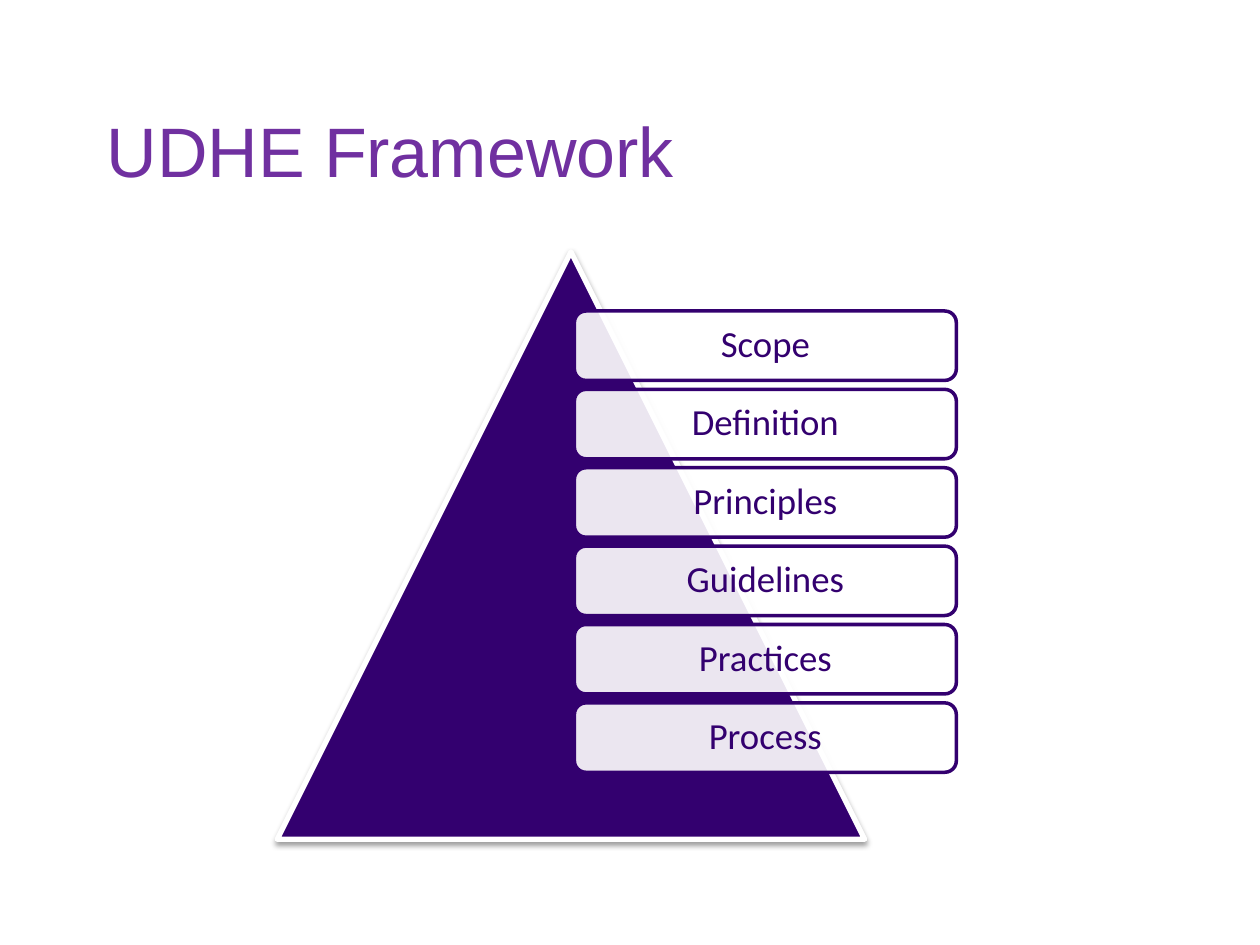
from dataclasses import dataclass

from lxml import etree
from pptx import Presentation
from pptx import util as u
from pptx.dml.color import RGBColor
from pptx.enum import shapes, text
from pptx.oxml.ns import qn

PURPLE, VIOLET, WHITE = "33006F", "7030A0", "FFFFFF"
LAYERS = ("Scope", "Definition", "Principles", "Guidelines", "Practices", "Process")
FIRST_LAYER_TOP, LAYER_PITCH = 6.27, 1.58


@dataclass
class Box:
    """Position and size in centimetres."""
    left: float
    top: float
    width: float
    height: float

    def lengths(self) -> list:
        return [u.Cm(v) for v in (self.left, self.top, self.width, self.height)]


def colour(hex_value: str) -> RGBColor:
    return RGBColor.from_string(hex_value)


def set_all(target, values: dict) -> None:
    for name, value in values.items():
        setattr(target, name, value)


def write(shape, words: str, frame_format: dict, paragraph_format: dict,
          font_format: dict, font_colour: str) -> None:
    set_all(shape.text_frame, {"word_wrap": True, **frame_format})
    paragraph = shape.text_frame.paragraphs[0]
    set_all(paragraph, {"line_spacing": 0.9, **paragraph_format})
    run = paragraph.add_run()
    run.text = words
    set_all(run.font, font_format)
    run.font.color.rgb = colour(font_colour)


def add_outlined(slide, kind, box: Box, fill: str, line: str, line_width: float):
    shape = slide.shapes.add_shape(kind, *box.lengths())
    shape.shadow.inherit = False
    shape.fill.solid()
    shape.fill.fore_color.rgb = colour(fill)
    shape.line.color.rgb = colour(line)
    shape.line.width = u.Pt(line_width)
    return shape


def set_alpha(colour_element, percent: int) -> None:
    etree.SubElement(colour_element, qn("a:alpha"), val=str(percent * 1000))


def add_pyramid(slide) -> None:
    """Draw the triangle with its soft shadow straight below."""
    pyramid = add_outlined(slide, shapes.MSO_SHAPE.ISOSCELES_TRIANGLE,
                           Box(5.59, 5.08, 11.84, 11.84), PURPLE, WHITE, 3)
    etree.SubElement(pyramid.line._get_or_add_ln(), qn("a:round"))
    effects = pyramid._element.spPr.find(qn("a:effectLst"))
    shadow = etree.SubElement(effects, qn("a:outerShdw"), blurRad=str(u.Pt(3.1)),
                              dist=str(u.Pt(1.6)), dir="5400000", rotWithShape="0")
    set_alpha(etree.SubElement(shadow, qn("a:srgbClr"), val="000000"), 38)


def add_layer(slide, label: str, top: float) -> None:
    layer = add_outlined(slide, shapes.MSO_SHAPE.ROUNDED_RECTANGLE,
                         Box(11.58, top, 7.7, 1.4), WHITE, PURPLE, 2)
    set_alpha(layer._element.spPr.find(f"{qn('a:solidFill')}/{qn('a:srgbClr')}"), 90)
    margins = dict.fromkeys(
        ("margin_left", "margin_top", "margin_right", "margin_bottom"), u.Cm(0.23))
    write(layer, label, {"vertical_anchor": text.MSO_ANCHOR.MIDDLE, **margins},
          {"alignment": text.PP_ALIGN.CENTER},
          {"name": "Calibri", "size": u.Pt(21)}, PURPLE)


def main() -> None:
    deck = Presentation()
    set_all(deck, {"slide_width": u.Cm(25.4), "slide_height": u.Cm(19.05)})
    slide = deck.slides.add_slide(deck.slide_layouts[6])

    heading = slide.shapes.add_textbox(*Box(1.9, 2.11, 21.16, 2.11).lengths())
    write(heading, "UDHE Framework", {"margin_top": u.Cm(0.25)}, {},
          {"name": "Arial", "size": u.Pt(40)}, VIOLET)

    add_pyramid(slide)
    for index, label in enumerate(LAYERS):
        add_layer(slide, label, FIRST_LAYER_TOP + index * LAYER_PITCH)

    deck.save("out.pptx")


if __name__ == "__main__":
    main()
